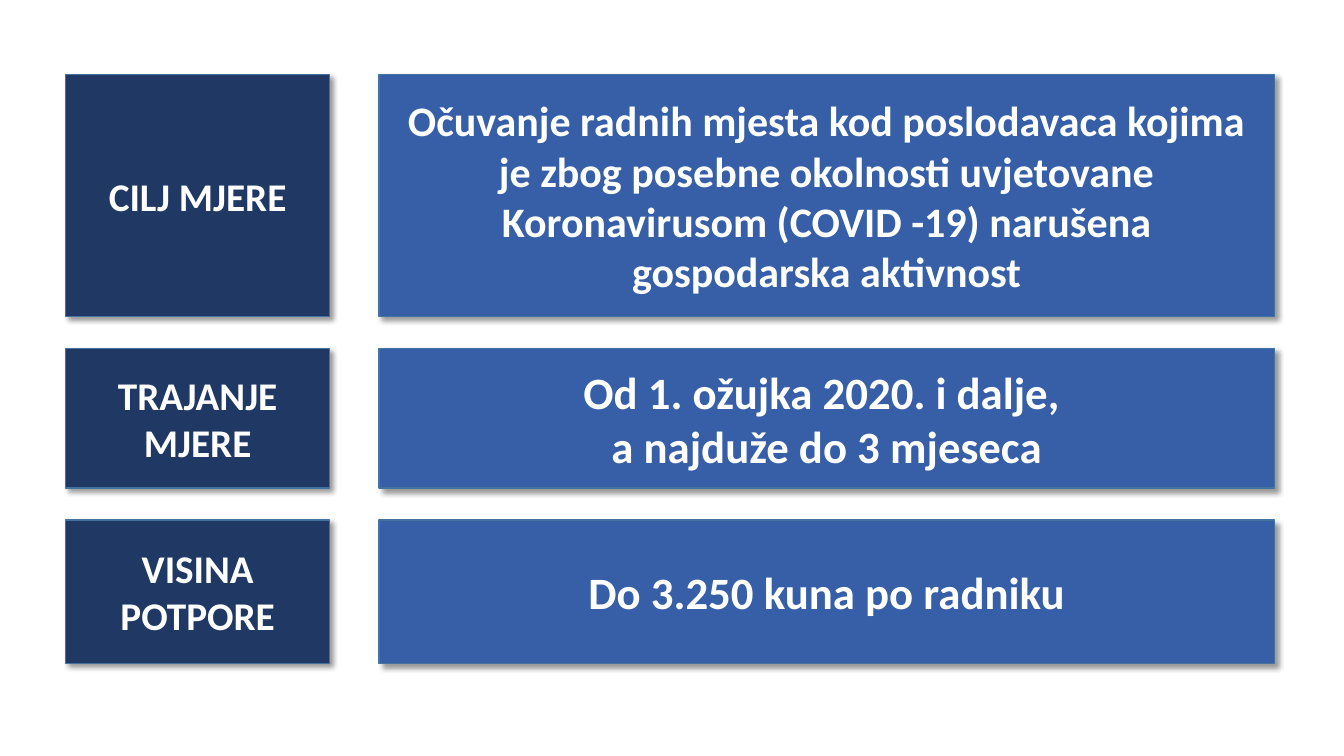
from lxml import etree
from pptx import Presentation, util as u
from pptx.dml.color import RGBColor
from pptx.enum import shapes, text
from pptx.oxml.ns import qn

COLORS = {
    "label": "203864",
    "detail": "365FA8",
    "border": "43739E",
    "text": "FFFFFF",
    "shadow": "000000",
}

# top, height, label, detail, detail text size
ROWS = [
    (0.74, 2.4, "CILJ MJERE",
     "Očuvanje radnih mjesta kod poslodavaca kojima je zbog posebne okolnosti "
     "uvjetovane Koronavirusom (COVID -19) narušena gospodarska aktivnost", 30),
    (3.46, 1.38, "TRAJANJE MJERE",
     "Od 1. ožujka 2020. i dalje, \va najduže do 3 mjeseca", 32),
    (5.16, 1.42, "VISINA POTPORE", "Do 3.250 kuna po radniku", 32),
]
LABEL_LEFT, LABEL_WIDTH, LABEL_SIZE = 0.65, 2.62, 28
DETAIL_LEFT, DETAIL_WIDTH = 3.76, 8.88


def add_shadow(box):
    """Give the box a soft shadow towards the lower right."""
    box.shadow.inherit = False
    effects = box._element.spPr.find(qn("a:effectLst"))
    shadow = etree.SubElement(
        effects, qn("a:outerShdw"), blurRad=str(u.Pt(4)), dist=str(u.Pt(3)),
        dir=str(45 * 60000), algn="tl", rotWithShape="0")
    color = etree.SubElement(shadow, qn("a:srgbClr"), val=COLORS["shadow"])
    etree.SubElement(color, qn("a:alpha"), val="40000")


def add_box(page, left, top, width, height, fill, words, size):
    box = page.shapes.add_shape(
        shapes.MSO_SHAPE.RECTANGLE,
        u.Inches(left), u.Inches(top), u.Inches(width), u.Inches(height))
    box.fill.solid()
    box.fill.fore_color.rgb = RGBColor.from_string(COLORS[fill])
    box.line.color.rgb = RGBColor.from_string(COLORS["border"])
    box.line.width = u.Pt(1)
    add_shadow(box)

    frame = box.text_frame
    frame.word_wrap = True
    frame.vertical_anchor = text.MSO_ANCHOR.MIDDLE
    para = frame.paragraphs[0]
    para.text = words
    para.alignment = text.PP_ALIGN.CENTER
    para.font.name = "Calibri"
    para.font.size = u.Pt(size)
    para.font.bold = True
    para.font.color.rgb = RGBColor.from_string(COLORS["text"])


deck = Presentation()
deck.slide_width = u.Inches(13.33)
deck.slide_height = u.Inches(7.5)
page = deck.slides.add_slide(deck.slide_layouts[6])

for top, height, label, detail, detail_size in ROWS:
    add_box(page, LABEL_LEFT, top, LABEL_WIDTH, height, "label", label, LABEL_SIZE)
    add_box(page, DETAIL_LEFT, top, DETAIL_WIDTH, height, "detail", detail, detail_size)

deck.save("out.pptx")
